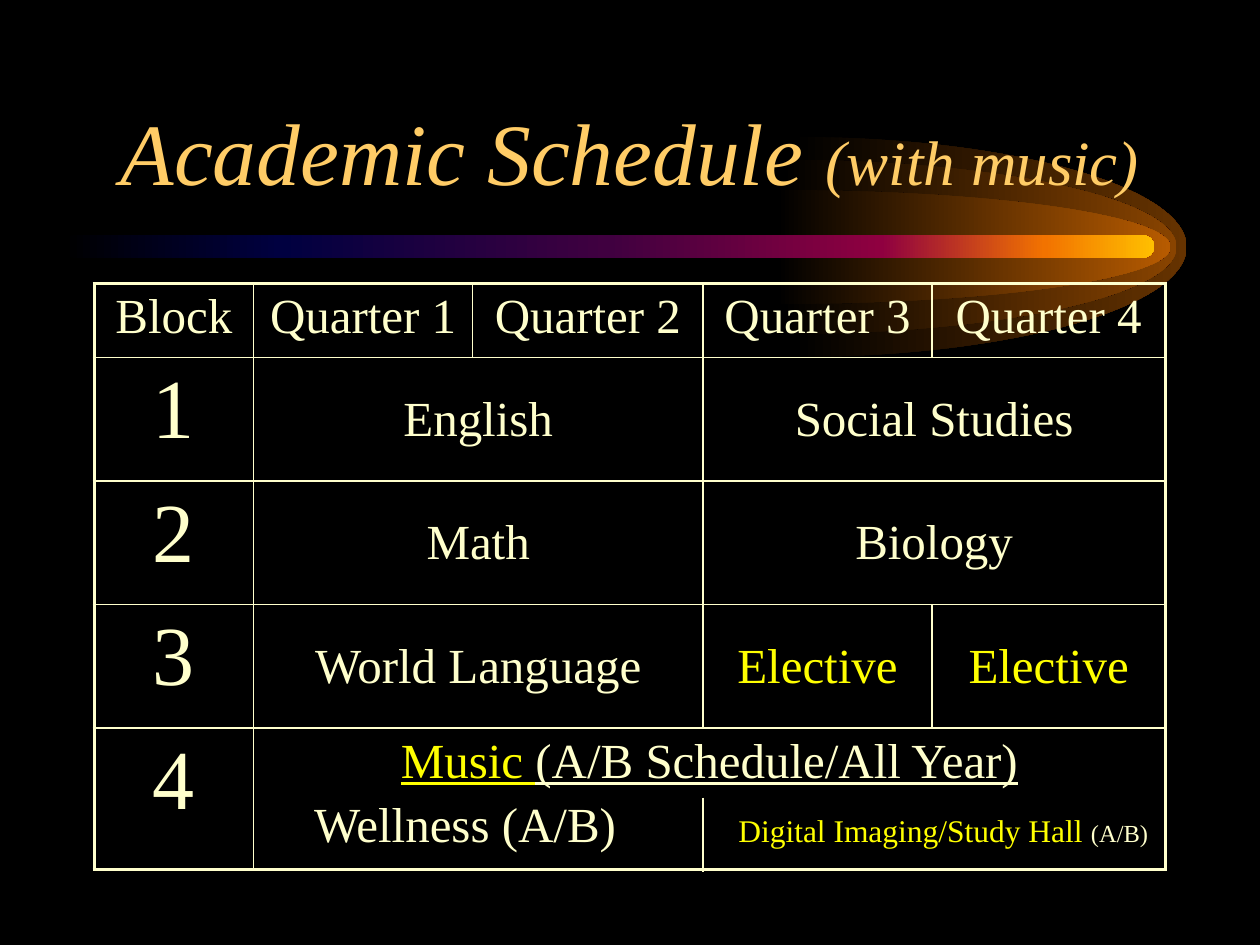
import dataclasses

import lxml.etree
import pptx
import pptx.dml.color
import pptx.enum.shapes
import pptx.enum.text
import pptx.oxml.ns
import pptx.util

Cm = pptx.util.Cm
Pt = pptx.util.Pt
RGB = pptx.dml.color.RGBColor.from_string
qn = pptx.oxml.ns.qn
sub = lxml.etree.SubElement


@dataclasses.dataclass(frozen=True)
class Theme:
    font: str = "Times New Roman"
    background: str = "000000"
    title: str = "FFCC66"
    text: str = "FFFFCC"
    accent: str = "FFFF00"
    glows: tuple = ("663300", "894400", "B75B00")
    bar: tuple = ((0, "000000"), (20, "000040"), (50, "400040"),
                  (75, "8F0040"), (90, "F27300"), (100, "FFBF00"))
    title_size: int = 50
    subtitle_size: int = 36
    block_size: int = 48
    body_size: int = 28
    option_size: int = 18
    note_size: int = 14
    outer: float = 2.25
    inner: float = 1


theme = Theme()


def paint_gradient(sp, stops):
    sp.shadow.inherit = False
    sp.line.fill.background()
    sp.fill.gradient()
    sp.fill.gradient_angle = 0
    gs_list = sp._element.spPr.find(qn("a:gradFill")).find(qn("a:gsLst"))
    for gs in list(gs_list):
        gs_list.remove(gs)
    for position, color in stops:
        gs = sub(gs_list, qn("a:gs"), pos=str(position * 1000))
        sub(gs, qn("a:srgbClr"), val=color)


def add_run(p, text, size, color):
    r = p.add_run()
    r.text = text
    r.font.size = Pt(size)
    r.font.color.rgb = RGB(color)


prs = pptx.Presentation()
prs.slide_width = Cm(25.4)
prs.slide_height = Cm(19.05)
s = prs.slides.add_slide(prs.slide_layouts[5])
s.background.fill.solid()
s.background.fill.fore_color.rgb = RGB(theme.background)

center_y, radius_x = 4.98, 7.95
half_ellipse = [(0, -1), (0.55, -1), (1, -0.55), (1, 0), (1, 0.55), (0.55, 1), (0, 1)]
glow_sizes = [(15.97, 2.22), (15.77, 1.76), (15.65, 1.15)]
for (center_x, radius_y), color in zip(glow_sizes, theme.glows):
    points = [(Cm(center_x + radius_x * x), Cm(center_y + radius_y * y))
              for x, y in half_ellipse]
    builder = s.shapes.build_freeform(*points[0])
    builder.add_line_segments(points[1:], close=True)
    glow = builder.convert_to_shape()
    lines = list(glow._element.spPr.iter(qn("a:lnTo")))
    for k in range(0, 6, 3):
        curve = lxml.etree.Element(qn("a:cubicBezTo"))
        lines[k].addprevious(curve)
        for line in lines[k:k + 3]:
            curve.append(line[0])
            line.getparent().remove(line)
    paint_gradient(glow, [(0, theme.background), (100, color)])

bar = s.shapes.add_shape(pptx.enum.shapes.MSO_SHAPE.ROUNDED_RECTANGLE,
                         Cm(1.27), Cm(4.74), Cm(22), Cm(0.46))
bar.adjustments[0] = 0.5
paint_gradient(bar, theme.bar)

title = s.shapes.title
s.shapes._spTree.append(title._element)
title.left, title.top, title.width, title.height = Cm(1.9), Cm(1.05), Cm(21.6), Cm(3.18)
tf = title.text_frame
tf.word_wrap = True
tf.auto_size = pptx.enum.text.MSO_AUTO_SIZE.NONE
tf.vertical_anchor = pptx.enum.text.MSO_ANCHOR.BOTTOM
p = tf.paragraphs[0]
p.alignment = pptx.enum.text.PP_ALIGN.CENTER
p.font.name = theme.font
p.font.italic = True
add_run(p, "Academic Schedule ", theme.title_size, theme.title)
add_run(p, "(with music)", theme.subtitle_size, theme.title)

col_widths = [3.21, 4.42, 4.64, 4.62, 4.7]
row_heights = [1.49, 2.49, 2.49, 2.49, 2.85]
schedule = [
    ["Block", "Quarter 1", "Quarter 2", "Quarter 3", "Quarter 4"],
    ["1", "English", None, "Social Studies", None],
    ["2", "Math", None, "Biology", None],
    ["3", "World Language", None, "Elective", "Elective"],
    ["4", "", None, None, None],
]
last_row, last_col = len(schedule) - 1, len(col_widths) - 1
table_left, table_top = 1.9, 5.72
frame = s.shapes.add_table(len(schedule), len(col_widths), Cm(table_left), Cm(table_top),
                           Cm(sum(col_widths)), Cm(sum(row_heights)))
table = frame.table
table.first_row = False
table.horz_banding = False
style_id = table._tbl.tblPr.find(qn("a:tableStyleId"))
style_id.text = "{2D5ABB26-0587-4C30-8999-92F81FD0307C}"
for column, width in zip(table.columns, col_widths):
    column.width = Cm(width)
for row, height in zip(table.rows, row_heights):
    row.height = Cm(height)

for i, texts in enumerate(schedule):
    for j, text in enumerate(texts):
        if text is None:
            continue
        end = j
        while end < last_col and texts[end + 1] is None:
            end += 1
        cell = table.cell(i, j)
        if end > j:
            cell.merge(table.cell(i, end))
        for col in range(j, end + 1):
            part = table.cell(i, col)
            tc_pr = part._tc.get_or_add_tcPr()
            sides = [("L", col == j, j == 0), ("R", col in (j, end), end == last_col),
                     ("T", True, i == 0), ("B", True, i == last_row)]
            for side, shown, outside in sides:
                if shown:
                    width = Pt(theme.outer if outside else theme.inner)
                    ln = sub(tc_pr, qn("a:ln" + side), w=str(width))
                    fill = sub(ln, qn("a:solidFill"))
                    sub(fill, qn("a:srgbClr"), val=theme.text)
            part.fill.background()
        top_aligned = i in (0, last_row) or j == 0
        anchors = pptx.enum.text.MSO_ANCHOR
        cell.vertical_anchor = anchors.TOP if top_aligned else anchors.MIDDLE
        p = cell.text_frame.paragraphs[0]
        p.alignment = pptx.enum.text.PP_ALIGN.CENTER
        p.font.name = theme.font
        if text:
            size = theme.block_size if i and j == 0 else theme.body_size
            color = theme.accent if text == "Elective" else theme.text
            p.font.size = Pt(size)
            p.font.color.rgb = RGB(color)
            p.add_run().text = text

tf = table.cell(last_row, 1).text_frame
p = tf.paragraphs[0]
p.font.underline = True
add_run(p, "Music ", theme.body_size, theme.accent)
add_run(p, "(A/B Schedule/All Year)", theme.body_size, theme.text)

p = tf.add_paragraph()
p.space_before = Pt(5.6)
tabs = sub(p._p.get_or_add_pPr(), qn("a:tabLst"))
for position in (0.97, 9.52):
    sub(tabs, qn("a:tab"), pos=str(Cm(position)), algn="l")
p.font.name = theme.font
add_run(p, "\tWellness (A/B)", theme.body_size, theme.text)
add_run(p, "\tDigital Imaging/Study Hall ", theme.option_size, theme.accent)
add_run(p, "(A/B)", theme.note_size, theme.text)

divider_x = Cm(table_left + sum(col_widths[:3]))
divider = s.shapes.add_connector(pptx.enum.shapes.MSO_CONNECTOR.STRAIGHT,
                                 divider_x, Cm(16.08), divider_x, Cm(17.58))
divider.line.color.rgb = RGB(theme.text)
divider.line.width = Pt(theme.inner)
sub(divider._element.spPr, qn("a:effectLst"))

prs.save("out.pptx")
